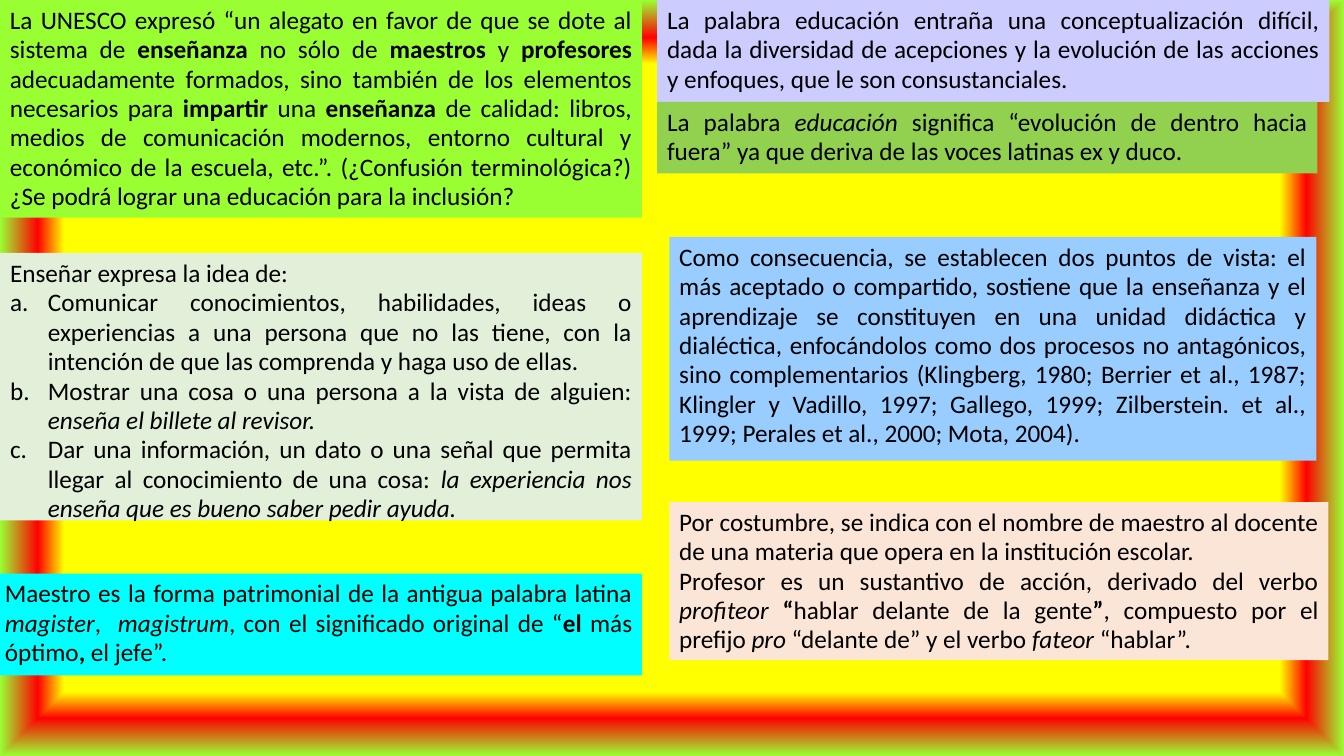
"""Build a slide of coloured text panels on teaching, teachers and education."""
from lxml import etree
from pptx import Presentation
from pptx import util as u
from pptx.dml.color import RGBColor
from pptx.enum import text
from pptx.oxml import ns

COLOURS = {
    "text": "000000", "yellow": "FFFF00", "red": "FF0000",
    "lime": "99FF33", "green": "66FF33", "lilac": "CCCCFF",
    "olive": "92D050", "mint": "E2F0D9", "sky": "99CCFF",
    "cyan": "00FFFF", "peach": "FBE5D6",
}
BACKGROUND_STOPS = [(83, "yellow"), (90, "red"), (100, "lime"), (100, "green")]
FRAME_FORMAT = {
    "word_wrap": True,
    "auto_size": text.MSO_AUTO_SIZE.SHAPE_TO_FIT_TEXT,
    "vertical_anchor": text.MSO_ANCHOR.TOP,
}
PARAGRAPH_FORMAT = {
    "alignment": text.PP_ALIGN.JUSTIFY,
    "line_spacing": u.Pt(21),
    "space_before": u.Pt(0),
    "space_after": u.Pt(0),
}
FONT_FORMAT = {"name": "Calibri", "size": u.Pt(18)}
LIST_INDENT = u.Pt(27)


def bold(words):
    return words, {"bold": True}


def italic(words):
    return words, {"italic": True}


PANELS = [
    ("lime", (0, 0, 458.6, 155.5), [[
        "La UNESCO expresó “un alegato en favor de que se dote al sistema de ",
        bold("enseñanza"), " no sólo de ", bold("maestros"), " y ", bold("profesores"),
        " adecuadamente formados, sino también de los elementos necesarios para ",
        bold("impartir"), " una ", bold("enseñanza"),
        " de calidad: libros, medios de comunicación modernos, entorno cultural y "
        "económico de la escuela, etc.”. (¿Confusión terminológica?) "
        "¿Se podrá lograr una educación para la inclusión?",
    ]]),
    ("lilac", (469.4, 0, 480.2, 72.7), [[
        "La palabra educación entraña una conceptualización difícil, dada la diversidad "
        "de acepciones y la evolución de las acciones y enfoques, que le son consustanciales. ",
    ]]),
    ("olive", (469.4, 72.7, 471.6, 51.1), [[
        "La palabra ", italic("educación"),
        " significa “evolución de dentro hacia fuera” ya que deriva de las voces "
        "latinas ex y duco. ",
    ]]),
    ("sky", (478.1, 169.2, 462.2, 159.8), [[
        "Como consecuencia, se establecen dos puntos de vista: el más aceptado o "
        "compartido, sostiene que la enseñanza y el aprendizaje se constituyen en una "
        "unidad didáctica y dialéctica, enfocándolos como dos procesos no antagónicos, "
        "sino complementarios (Klingberg, 1980; Berrier et al., 1987; Klingler y Vadillo, "
        "1997; Gallego, 1999; Zilberstein. et al., 1999; Perales et al., 2000; Mota, 2004). ",
    ]]),
    ("cyan", (-3.6, 409.7, 462.2, 72.7), [[
        "Maestro es la forma patrimonial de la antigua palabra latina ",
        italic("magister"), ",  ", italic("magistrum"),
        ", con el significado original de “", bold("el "), "más óptimo", bold(", "),
        "el jefe”. ",
    ]]),
    ("peach", (478.1, 358.6, 470.9, 113), [
        ["Por costumbre, se indica con el nombre de maestro al docente de una materia "
         "que opera en la institución escolar."],
        ["Profesor es un sustantivo de acción, derivado del verbo ",
         italic("profiteor"), bold(" “"), "hablar delante de la gente", bold("”"),
         ", compuesto por el prefijo ", italic("pro"), " “delante de” y el verbo ",
         italic("fateor"), " “hablar”."],
    ]),
]
MEANINGS_BOX = (0, 180.7, 458.6, 198)
MEANINGS = [
    ["Enseñar expresa la idea de:"],
    ["Comunicar conocimientos, habilidades, ideas o experiencias a una persona que no "
     "las tiene, con la intención de que las comprenda y haga uso de ellas."],
    ["Mostrar una cosa o una persona a la vista de alguien: ",
     italic("enseña el billete al revisor.")],
    ["Dar una información, un dato o una señal que permita llegar al conocimiento de "
     "una cosa: ", italic("la experiencia nos enseña que es bueno saber pedir ayuda.")],
]


def apply_format(target, values):
    for name, value in values.items():
        setattr(target, name, value)


def rgb(colour):
    return RGBColor.from_string(COLOURS[colour])


def paint_background(slide):
    slide.background.fill.gradient()
    gradient = slide.background.element.find(".//" + ns.qn("a:gradFill"))
    for child in list(gradient):
        gradient.remove(child)
    stops = etree.SubElement(gradient, ns.qn("a:gsLst"))
    for position, colour in BACKGROUND_STOPS:
        stop = etree.SubElement(stops, ns.qn("a:gs"), pos=str(position * 1000))
        etree.SubElement(stop, ns.qn("a:srgbClr"), val=COLOURS[colour])
    rectangle = etree.SubElement(gradient, ns.qn("a:path"), path="rect")
    etree.SubElement(rectangle, ns.qn("a:fillToRect"),
                     {side: "50000" for side in "ltrb"})


def write_paragraph(paragraph, parts):
    apply_format(paragraph, PARAGRAPH_FORMAT)
    for part in parts:
        words, emphasis = (part, {}) if isinstance(part, str) else part
        run = paragraph.add_run()
        run.text = words
        apply_format(run.font, {**FONT_FORMAT, **emphasis})
        run.font.color.rgb = rgb("text")


def fill_panel(shape, colour, box, paragraphs):
    apply_format(shape, dict(zip(("left", "top", "width", "height"), map(u.Pt, box))))
    shape.fill.solid()
    shape.fill.fore_color.rgb = rgb(colour)
    frame = shape.text_frame
    apply_format(frame, FRAME_FORMAT)
    for index, parts in enumerate(paragraphs):
        paragraph = frame.add_paragraph() if index else frame.paragraphs[0]
        write_paragraph(paragraph, parts)


def set_bullet(paragraph, lettered):
    indent = LIST_INDENT if lettered else 0
    properties = paragraph._p.get_or_add_pPr()
    properties.set("marL", str(indent))
    properties.set("indent", str(-indent))
    if lettered:
        etree.SubElement(properties, ns.qn("a:buFont"), typeface="+mj-lt")
        etree.SubElement(properties, ns.qn("a:buAutoNum"), type="alphaLcPeriod")
    else:
        etree.SubElement(properties, ns.qn("a:buNone"))


def add_panel(slide, colour, box, paragraphs):
    shape = slide.shapes.add_textbox(*map(u.Pt, box))
    fill_panel(shape, colour, box, paragraphs)


def add_meanings(slide):
    body = slide.placeholders[1]
    fill_panel(body, "mint", MEANINGS_BOX, MEANINGS)
    lead, *items = body.text_frame.paragraphs
    lead.alignment = text.PP_ALIGN.LEFT
    set_bullet(lead, False)
    for item in items:
        set_bullet(item, True)


def main():
    presentation = Presentation()
    apply_format(presentation, {"slide_width": u.Pt(960), "slide_height": u.Pt(540)})
    slide = presentation.slides.add_slide(presentation.slide_layouts[1])
    title = slide.shapes.title.element
    title.getparent().remove(title)
    paint_background(slide)
    add_meanings(slide)
    for panel in PANELS:
        add_panel(slide, *panel)
    presentation.save("out.pptx")


if __name__ == "__main__":
    main()
